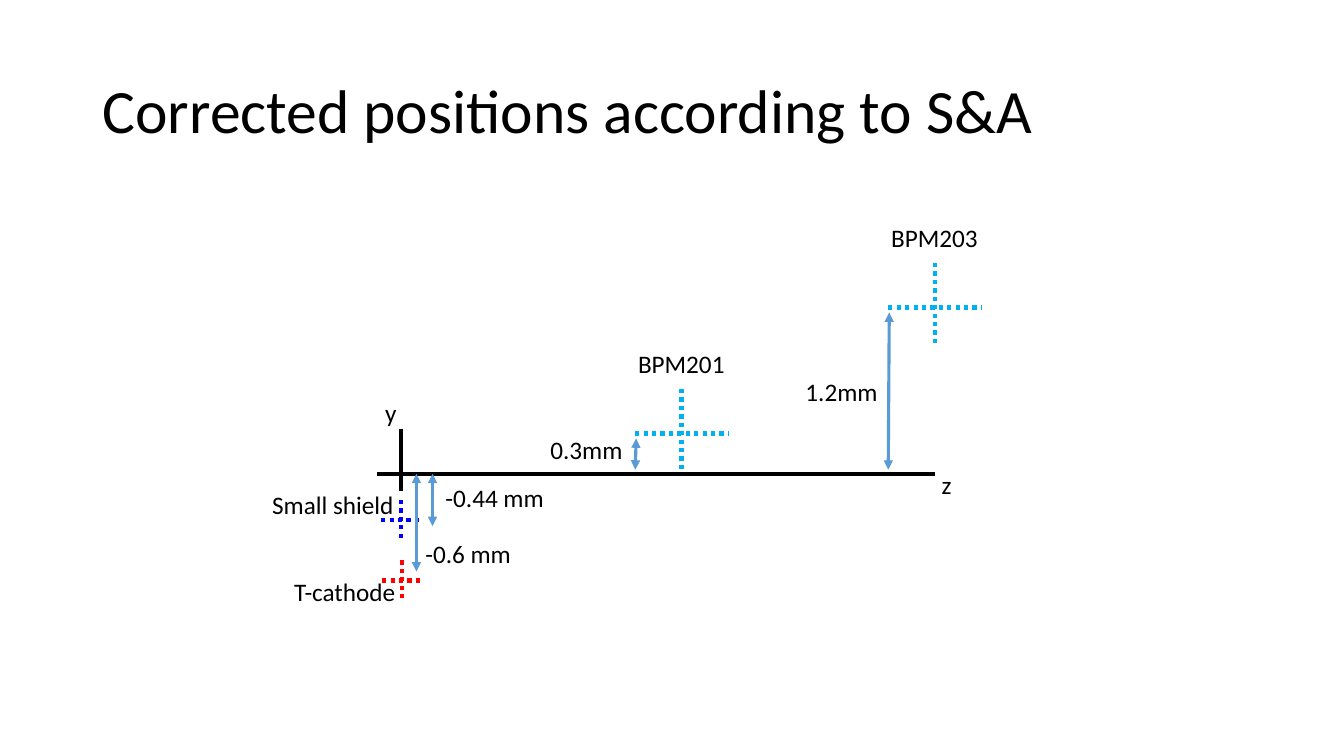
"""Build the slide of corrected BPM, shield and cathode positions."""
import pptx
import pptx.util
import pptx.dml.color
import pptx.enum.dml
import pptx.enum.shapes
import pptx.enum.text
import pptx.oxml
import pptx.oxml.ns

Inches = pptx.util.Inches
ARROW = "5B9BD5"
BLACK = "000000"
AXIS_Y = 4.7

prs = pptx.Presentation()
prs.slide_width = Inches(13.33)
prs.slide_height = Inches(7.5)
s = prs.slides.add_slide(prs.slide_layouts[6])


def add_line(x1, y1, x2, y2, color, width=3, dotted=False, arrows=False):
    sp = s.shapes.add_connector(pptx.enum.shapes.MSO_CONNECTOR.STRAIGHT,
                                Inches(x1), Inches(y1), Inches(x2), Inches(y2))
    sp.line.color.rgb = pptx.dml.color.RGBColor.from_string(color)
    sp.line.width = pptx.util.Pt(width)
    if dotted:
        sp.line.dash_style = pptx.enum.dml.MSO_LINE.ROUND_DOT
    if arrows:
        ln = sp.line._get_or_add_ln()
        for end in ("a:headEnd", "a:tailEnd"):
            pptx.oxml.ns.qn(end)
            ln.append(pptx.oxml.parse_xml(
                f'<{end} {pptx.oxml.ns.nsdecls("a")} type="triangle"/>'))
    sp._element.spPr.append(pptx.oxml.parse_xml(
        f'<a:effectLst {pptx.oxml.ns.nsdecls("a")}/>'))


def add_text(text, x, y, w, h=0.4, size=18, wrap=False):
    sp = s.shapes.add_textbox(Inches(x), Inches(y), Inches(w), Inches(h))
    tf = sp.text_frame
    tf.word_wrap = wrap
    tf.text = text
    font = tf.paragraphs[0].runs[0].font
    font.name = "Calibri"
    font.size = pptx.util.Pt(size)
    font.color.rgb = pptx.dml.color.RGBColor.from_string(BLACK)
    return tf


title = add_text("Corrected positions according to S&A", 0.92, 0.4, 11.5, 1.45,
                 size=44, wrap=True)
title.vertical_anchor = pptx.enum.text.MSO_ANCHOR.MIDDLE
title.paragraphs[0].line_spacing = 0.9

add_line(3.74, AXIS_Y, 9.27, AXIS_Y, BLACK)
add_line(3.98, 4.26, 3.98, 4.87, BLACK)

crosses = [
    (3.99, 5.76, 0.2, 0.2, "FF0000"),
    (3.98, 5.16, 0.2, 0.2, "0000FF"),
    (6.76, 4.3, 0.46, 0.4, "00B0F0"),
    (9.27, 3.05, 0.46, 0.4, "00B0F0"),
]
for x, y, dx, dy, color in crosses:
    top = y - dy if dy < 0.4 else y - 0.44
    bottom = y + dy if dy < 0.4 else y + 0.36
    add_line(x - dx, y, x + dx, y, color, dotted=True)
    add_line(x, top, x, bottom, color, dotted=True)

for x1, y1, x2, y2 in [
    (4.13, 5.67, 4.13, AXIS_Y),
    (4.29, 5.22, 4.29, AXIS_Y),
    (6.3, 4.66, 6.31, 4.35),
    (8.81, 4.66, 8.82, 3.1),
]:
    add_line(x1, y1, x2, y2, ARROW, width=2.25, arrows=True)

for text, x, y, w in [
    ("z", 9.24, 4.61, 0.3),
    ("y", 3.72, 3.89, 0.32),
    ("T-cathode", 2.82, 5.67, 1.24),
    ("Small shield", 2.6, 4.81, 1.42),
    ("BPM201", 6.23, 3.41, 1.07),
    ("BPM203", 8.74, 2.16, 1.07),
    ("-0.6 mm", 4.12, 5.29, 1.05),
    ("-0.44 mm", 4.32, 4.74, 1.19),
    ("0.3mm", 5.36, 4.26, 0.92),
    ("1.2mm", 7.89, 3.68, 0.92),
]:
    add_text(text, x, y, w)

prs.save("out.pptx")
